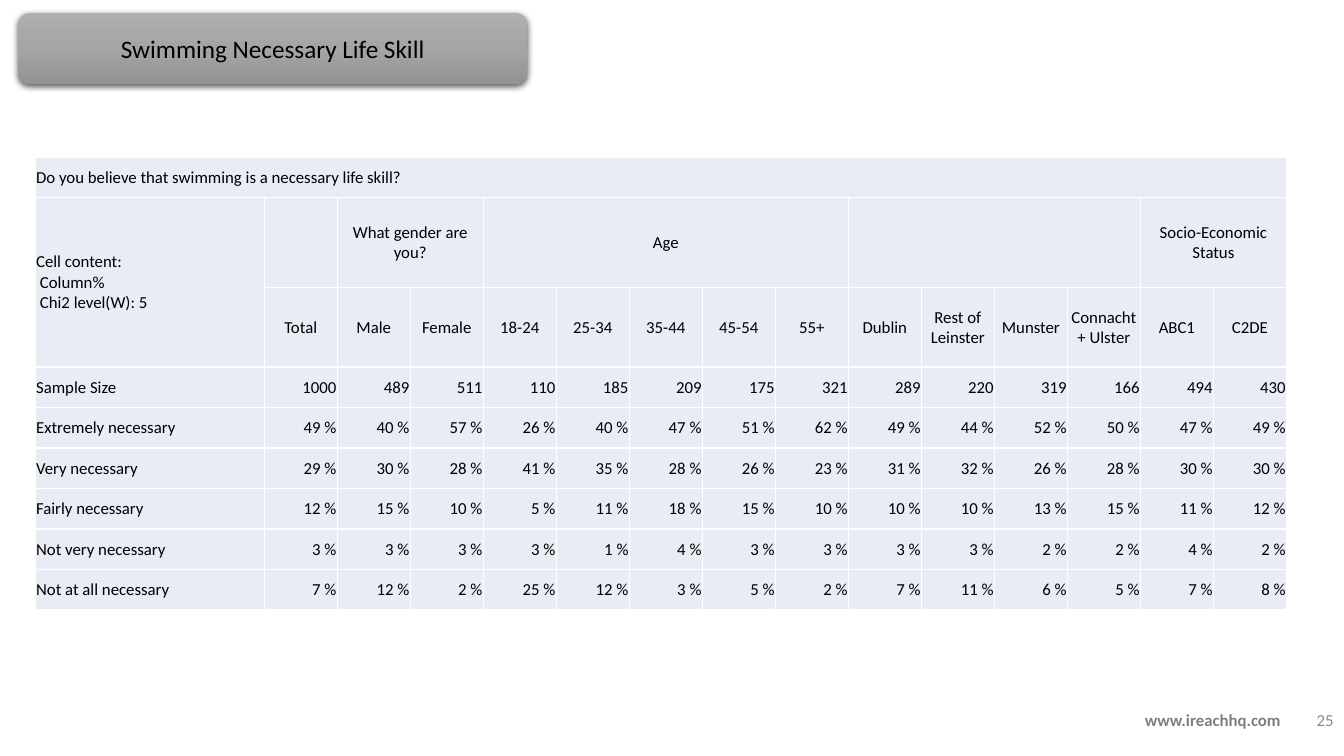
"""Build the survey slide on swimming as a necessary life skill."""
import copy
from dataclasses import dataclass

import lxml.etree
import pptx
import pptx.dml.color
import pptx.enum.shapes
import pptx.enum.text
import pptx.oxml
import pptx.oxml.ns
import pptx.util

Cm = pptx.util.Cm
Align = pptx.enum.text.PP_ALIGN
Anchor = pptx.enum.text.MSO_ANCHOR
FONT = "Calibri"
COLOURS = {
    "text": "000000", "cell": "E9EBF5", "border": "FFFFFF", "shadow": "000000",
    "site": "7F7F7F", "number": "8C8C8C",
    "plate_top": "AFAFAF", "plate_middle": "A5A5A5", "plate_bottom": "939393",
}
TITLE_BOX = (Cm(0.46), Cm(0.33), Cm(12.83), Cm(1.78))


@dataclass(frozen=True)
class Group:
    label: str
    columns: tuple[str, ...]


@dataclass(frozen=True)
class Answer:
    label: str
    shares: tuple[int, ...]


@dataclass(frozen=True)
class FooterItem:
    text: str
    box: tuple[float, float, float, float]
    colour: str
    align: Align
    bold: bool = False
    spacing: float = 1.0


QUESTION = "Do you believe that swimming is a necessary life skill?"
CELL_CONTENT = "Cell content:\n Column%\n Chi2 level(W): 5"
GROUPS = (
    Group("", ("Total",)),
    Group("What gender are you?", ("Male", "Female")),
    Group("Age", ("18-24", "25-34", "35-44", "45-54", "55+")),
    Group("", ("Dublin", "Rest of Leinster", "Munster", "Connacht + Ulster")),
    Group("Socio-Economic Status", ("ABC1", "C2DE")),
)
SAMPLE_SIZES = (1000, 489, 511, 110, 185, 209, 175, 321, 289, 220, 319, 166, 494, 430)
ANSWERS = (
    Answer("Extremely necessary", (49, 40, 57, 26, 40, 47, 51, 62, 49, 44, 52, 50, 47, 49)),
    Answer("Very necessary", (29, 30, 28, 41, 35, 28, 26, 23, 31, 32, 26, 28, 30, 30)),
    Answer("Fairly necessary", (12, 15, 10, 5, 11, 18, 15, 10, 10, 10, 13, 15, 11, 12)),
    Answer("Not very necessary", (3, 3, 3, 3, 1, 4, 3, 3, 3, 3, 2, 2, 4, 2)),
    Answer("Not at all necessary", (7, 12, 2, 25, 12, 3, 5, 2, 7, 11, 6, 5, 7, 8)),
)
FOOTER = (
    FooterItem("www.ireachhq.com", (28.6, 17.68, 4.75, 0.97), "site", Align.LEFT, True, 0.9),
    FooterItem("25", (26.24, 17.63, 7.62, 1.02), "number", Align.RIGHT),
)


def rgb(name: str) -> pptx.dml.color.RGBColor:
    return pptx.dml.color.RGBColor.from_string(COLOURS[name])


def write(frame, text: str, align: Align, size: int = 12, colour: str = "text",
          bold: bool = False, spacing: float = 1.0) -> None:
    paragraph = frame.paragraphs[0]
    paragraph.alignment = align
    paragraph.line_spacing = spacing
    for index, line in enumerate(text.split("\n")):
        if index:
            paragraph.add_line_break()
        run = paragraph.add_run()
        run.text = line
        run.font.name = FONT
        run.font.size = pptx.util.Pt(size)
        run.font.bold = bold
        run.font.color.rgb = rgb(colour)


def add_title(slide, text: str) -> None:
    plate = slide.shapes.add_shape(
        pptx.enum.shapes.MSO_SHAPE.ROUNDED_RECTANGLE, *TITLE_BOX)
    plate.line.fill.background()
    plate.fill.gradient()
    plate.fill.gradient_angle = 270
    stop_list = plate.element.spPr.find(".//" + pptx.oxml.ns.qn("a:gsLst"))
    stop_list.insert(1, copy.deepcopy(stop_list[0]))
    shades = ("plate_top", "plate_middle", "plate_bottom")
    for index, (stop, shade) in enumerate(zip(plate.fill.gradient_stops, shades)):
        stop.position = index / 2
        stop.color.rgb = rgb(shade)
    plate.shadow.inherit = False
    effects = plate.element.spPr.find(pptx.oxml.ns.qn("a:effectLst"))
    effects.append(pptx.oxml.parse_xml(
        f'<a:outerShdw {pptx.oxml.ns.nsdecls("a")} blurRad="57150" dist="19050" '
        f'dir="5400000" algn="ctr" rotWithShape="0"><a:srgbClr val="{COLOURS["shadow"]}">'
        '<a:alpha val="63000"/></a:srgbClr></a:outerShdw>'))

    title = slide.shapes.title
    title.left, title.top, title.width, title.height = TITLE_BOX
    title.text_frame.vertical_anchor = Anchor.MIDDLE
    title.text_frame.auto_size = pptx.enum.text.MSO_AUTO_SIZE.NONE
    write(title.text_frame, text, Align.CENTER, 18)
    title.element.addprevious(plate.element)


def add_borders(cell) -> None:
    properties = cell._tc.get_or_add_tcPr()
    for index, side in enumerate(("lnL", "lnR", "lnT", "lnB")):
        border = lxml.etree.Element(pptx.oxml.ns.qn(f"a:{side}"), w="12700")
        fill = lxml.etree.SubElement(border, pptx.oxml.ns.qn("a:solidFill"))
        lxml.etree.SubElement(fill, pptx.oxml.ns.qn("a:srgbClr"), val=COLOURS["border"])
        properties.insert(index, border)


def add_results(slide) -> None:
    row_heights = [1.02, 2.26, 2.01] + [1.02] * (1 + len(ANSWERS))
    column_widths = [5.77] + [1.84] * len(SAMPLE_SIZES)
    frame = slide.shapes.add_table(
        len(row_heights), len(column_widths), Cm(0.89), Cm(3.96),
        Cm(sum(column_widths)), Cm(sum(row_heights)))
    table = frame.table
    table.first_row = table.horz_banding = False
    for row, height in zip(table.rows, row_heights):
        row.height = Cm(height)
    for column, width in zip(table.columns, column_widths):
        column.width = Cm(width)
    for cell in table.iter_cells():
        cell.fill.solid()
        cell.fill.fore_color.rgb = rgb("cell")
        cell.vertical_anchor = Anchor.MIDDLE
        cell.margin_left = cell.margin_right = cell.margin_top = Cm(0.02)
        cell.margin_bottom = 0
        add_borders(cell)

    def put(row: int, column: int, text: str, align: Align) -> None:
        if text:
            write(table.cell(row, column).text_frame, text, align)

    table.cell(0, 0).merge(table.cell(0, len(SAMPLE_SIZES)))
    put(0, 0, QUESTION, Align.LEFT)
    table.cell(1, 0).merge(table.cell(2, 0))
    put(1, 0, CELL_CONTENT, Align.LEFT)
    first = 1
    for group in GROUPS:
        last = first + len(group.columns) - 1
        if last > first:
            table.cell(1, first).merge(table.cell(1, last))
        put(1, first, group.label, Align.CENTER)
        for column, label in enumerate(group.columns, first):
            put(2, column, label, Align.CENTER)
        first = last + 1

    rows = [("Sample Size", [str(size) for size in SAMPLE_SIZES])]
    rows += [(answer.label, [f"{share} %" for share in answer.shares]) for answer in ANSWERS]
    for row, (label, values) in enumerate(rows, 3):
        put(row, 0, label, Align.LEFT)
        for column, value in enumerate(values, 1):
            put(row, column, value, Align.RIGHT)


def add_footer(slide, item: FooterItem) -> None:
    frame = slide.shapes.add_textbox(*map(Cm, item.box)).text_frame
    frame.word_wrap = True
    frame.vertical_anchor = Anchor.MIDDLE
    write(frame, item.text, item.align, 12, item.colour, item.bold, item.spacing)


def main() -> None:
    deck = pptx.Presentation()
    deck.slide_width, deck.slide_height = Cm(33.87), Cm(19.05)
    slide = deck.slides.add_slide(deck.slide_layouts[5])
    add_title(slide, "Swimming Necessary Life Skill")
    add_results(slide)
    for item in FOOTER:
        add_footer(slide, item)
    deck.save("out.pptx")


if __name__ == "__main__":
    main()
